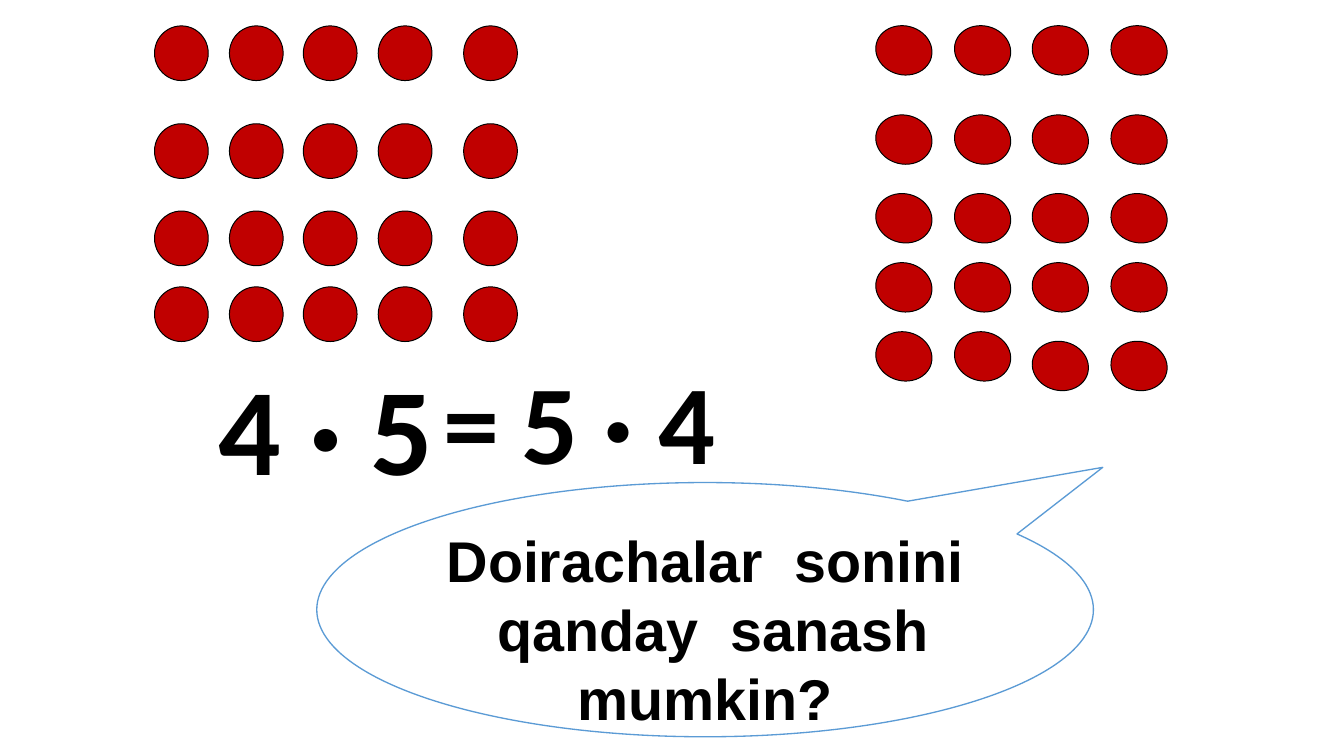
from pptx import Presentation
from pptx import util as u
from pptx.dml.color import RGBColor
from pptx.enum import shapes, text

BLANK_LAYOUT = 6
RED, BLACK, WHITE, BLUE = "C00000", "000000", "FFFFFF", "5B9BD5"


def color(hex_code):
    return RGBColor.from_string(hex_code)


def style_shape(shape, fill, line, line_width):
    shape.shadow.inherit = False
    shape.fill.solid()
    shape.fill.fore_color.rgb = color(fill)
    shape.line.color.rgb = color(line)
    shape.line.width = u.Pt(line_width)


def write_text(shape, content, font="Calibri", size=84.2, align=text.PP_ALIGN.LEFT):
    frame = shape.text_frame
    frame.word_wrap = True
    frame.vertical_anchor = text.MSO_ANCHOR.TOP
    frame.margin_left = frame.margin_right = u.Inches(0.13)
    frame.margin_top = frame.margin_bottom = u.Inches(0.06)
    paragraph = frame.paragraphs[0]
    paragraph.alignment = align
    run = paragraph.add_run()
    run.text = content
    run.font.name = font
    run.font.size = u.Pt(size)
    run.font.bold = True
    run.font.color.rgb = color(BLACK)


def add_circles(slide, positions, width, height, rotation=0):
    """Draw one group of counting circles."""
    group = slide.shapes.add_group_shape()
    for left, top in positions:
        circle = group.shapes.add_shape(
            shapes.MSO_SHAPE.OVAL,
            u.Inches(left), u.Inches(top), u.Inches(width), u.Inches(height))
        circle.rotation = rotation
        style_shape(circle, RED, BLACK, 0.75)


def add_formula_part(slide, content, left, width, height, size=84.2):
    box = slide.shapes.add_textbox(
        u.Inches(left), u.Inches(3.61), u.Inches(width), u.Inches(height))
    write_text(box, content, size=size)
    box.text_frame.auto_size = text.MSO_AUTO_SIZE.SHAPE_TO_FIT_TEXT


def add_question(slide, content):
    callout = slide.shapes.add_shape(
        shapes.MSO_SHAPE.OVAL_CALLOUT,
        u.Inches(3.3), u.Inches(5.03), u.Inches(8.09), u.Inches(2.65))
    # The tail points to the upper right
    callout.adjustments[0] = 0.512
    callout.adjustments[1] = -0.56
    style_shape(callout, WHITE, BLUE, 1)
    write_text(callout, content, font="Arial", size=43.1,
               align=text.PP_ALIGN.CENTER)


def main():
    presentation = Presentation()
    presentation.slide_width = u.Inches(14)
    presentation.slide_height = u.Inches(7.88)
    slide = presentation.slides.add_slide(presentation.slide_layouts[BLANK_LAYOUT])

    # Four rows of five
    add_circles(slide,
                [(left, top) for top in (0.27, 1.29, 2.2, 2.99)
                 for left in (1.61, 2.39, 3.16, 3.94, 4.83)],
                0.56, 0.57)

    # Five rows of four; the last row drops on its right half
    columns = (9.12, 9.94, 10.75, 11.57)
    positions = [(left, top) for top in (0.27, 1.2, 2.02, 2.74) for left in columns]
    positions += zip(columns, (3.46, 3.46, 3.56, 3.56))
    add_circles(slide, positions, 0.59, 0.51, rotation=14.1)

    # Question
    add_question(slide, "Doirachalar  sonini  qanday  sanash mumkin?")

    # Equation
    add_formula_part(slide, "4 · 5", 2.15, 2.55, 1.72, size=92.6)
    add_formula_part(slide, "5 · 4", 5.3, 2.36, 1.54)
    add_formula_part(slide, "=", 4.49, 0.86, 1.58)

    presentation.save("out.pptx")


if __name__ == "__main__":
    main()
